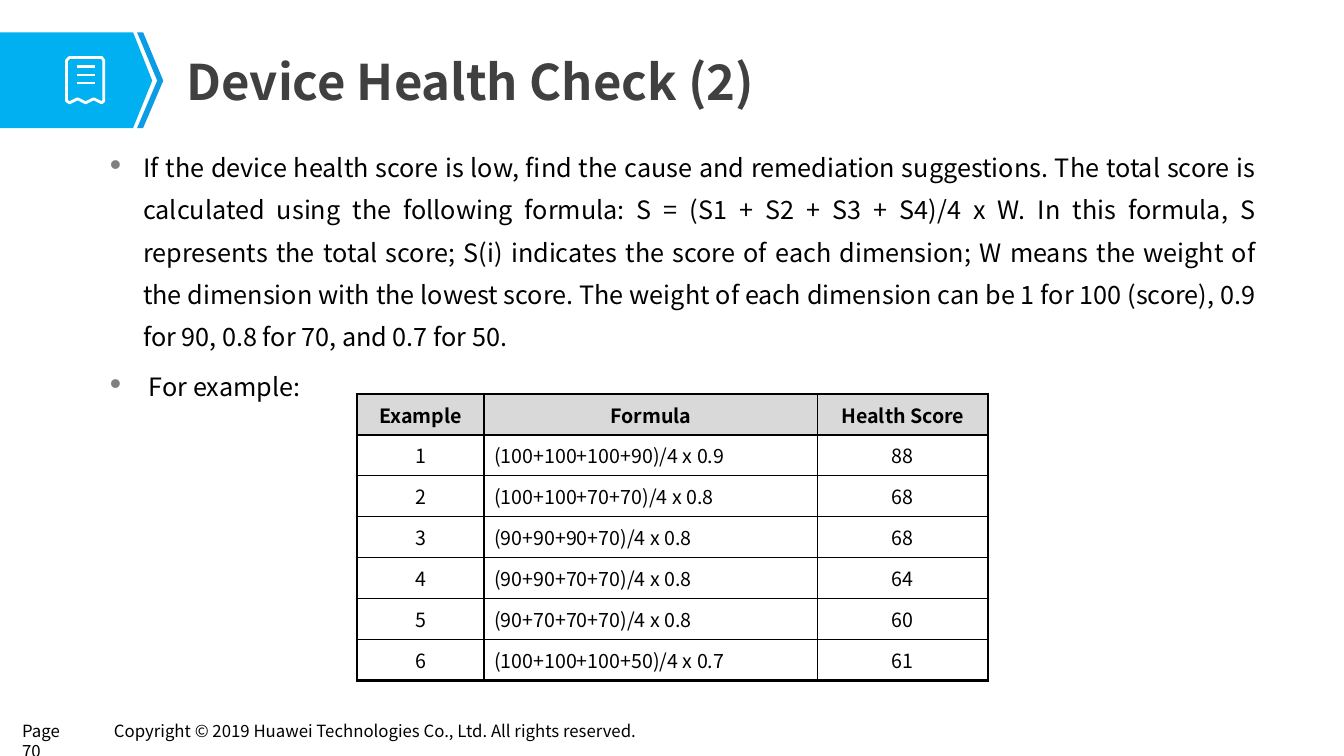
"""Build the Device Health Check slide with its score table."""
from lxml.etree import SubElement
from pptx import Presentation
from pptx.dml.color import RGBColor
from pptx.enum.shapes import MSO_CONNECTOR
from pptx.enum.text import MSO_ANCHOR, PP_ALIGN
from pptx.oxml.ns import qn
from pptx.util import Inches, Pt

FONT = "Noto Sans CJK SC"


def color(value):
    return RGBColor.from_string(value)


def style_text(paragraph, size, hex_color="000000", bold=False):
    for run in paragraph.runs:
        run.font.name = FONT
        run.font.size = Pt(size)
        run.font.bold = bold
        run.font.color.rgb = color(hex_color)


presentation = Presentation()
presentation.slide_width = Inches(13.33)
presentation.slide_height = Inches(7.5)
slide = presentation.slides.add_slide(presentation.slide_layouts[5])

footers = [
    (0.13, 0.77, "Page 70"),
    (1.04, 5.66, "Copyright © 2019 Huawei Technologies Co., Ltd. All rights reserved."),
]
for left, width, text in footers:
    footer = slide.shapes.add_textbox(Inches(left), Inches(7.11), Inches(width), Inches(0.29))
    frame = footer.text_frame
    frame.word_wrap = True
    frame.margin_left = frame.margin_right = Inches(0.09)
    frame.margin_top = frame.margin_bottom = Inches(0.04)
    frame.text = text
    style_text(frame.paragraphs[0], 12)

banner = [(0, 0.32), (1.32, 0.32), (1.51, 0.8), (1.32, 1.27), (0, 1.27)]
chevron = [(1.36, 0.32), (1.42, 0.32), (1.62, 0.8), (1.42, 1.27), (1.36, 1.27), (1.56, 0.8)]
receipt = [(0.69, 0.57), (1.01, 0.57), (1.03, 0.6), (1.03, 1), (1.01, 1.02), (0.93, 0.98),
           (0.85, 1.02), (0.77, 0.98), (0.69, 1.02), (0.66, 1), (0.66, 0.6)]
for points, fill in [(banner, "00B0F0"), (chevron, "0B9CE5"), (receipt, None)]:
    corners = [(Inches(x), Inches(y)) for x, y in points]
    builder = slide.shapes.build_freeform(*corners[0])
    builder.add_line_segments(corners[1:], close=True)
    shape = builder.convert_to_shape()
    shape.shadow.inherit = False
    if fill:
        shape.fill.solid()
        shape.fill.fore_color.rgb = color(fill)
        shape.line.fill.background()
    else:
        shape.fill.background()
        shape.line.color.rgb = color("FFFFFF")
        shape.line.width = Pt(2)

for row in range(3):
    y = Inches(0.66 + 0.08 * row)
    text_line = slide.shapes.add_connector(
        MSO_CONNECTOR.STRAIGHT, Inches(0.76), y, Inches(0.94), y)
    text_line.line.color.rgb = color("FFFFFF")
    text_line.line.width = Pt(1.5)
    SubElement(text_line._element.spPr, qn("a:effectLst"))

body = slide.shapes.add_textbox(Inches(1), Inches(1.35), Inches(11.55), Inches(5.12))
frame = body.text_frame
frame.word_wrap = True
frame.margin_left = frame.margin_right = Inches(0.09)
frame.margin_top = frame.margin_bottom = Inches(0.04)
frame.text = (
    "If the device health score is low, find the cause and remediation suggestions. "
    "The total score is calculated using the following formula: S = (S1 + S2 + S3 + S4)/4 x W. "
    "In this formula, S represents the total score; S(i) indicates the score of each dimension; "
    "W means the weight of the dimension with the lowest score. "
    "The weight of each dimension can be 1 for 100 (score), 0.9 for 90, 0.8 for 70, "
    "and 0.7 for 50."
)
example = frame.add_paragraph()
example.text = " For example:"
for paragraph in frame.paragraphs:
    properties = paragraph._p.get_or_add_pPr()
    properties.set("marL", str(Inches(0.33)))
    properties.set("indent", str(-Inches(0.33)))
    bullet_color = SubElement(properties, qn("a:buClr"))
    SubElement(bullet_color, qn("a:srgbClr"), val="808080")
    SubElement(properties, qn("a:buSzPct"), val="60000")
    SubElement(properties, qn("a:buFont"), typeface="Wingdings", charset="2")
    SubElement(properties, qn("a:buChar"), char="l")
    paragraph.alignment = PP_ALIGN.JUSTIFY
    paragraph.line_spacing = 1.4
    style_text(paragraph, 18)
example.space_before = Pt(5.4)

title = slide.shapes.title
title.left, title.top = Inches(1.74), Inches(0.45)
title.width, title.height = Inches(10.75), Inches(0.7)
frame = title.text_frame
frame.vertical_anchor = MSO_ANCHOR.MIDDLE
frame.margin_left = frame.margin_right = Inches(0.11)
frame.margin_top = frame.margin_bottom = Inches(0.05)
frame.text = "Device Health Check (2)"
frame.paragraphs[0].alignment = PP_ALIGN.LEFT
style_text(frame.paragraphs[0], 35, "404040", True)

scores = [
    ("Example", "Formula", "Health Score"),
    ("1", "(100+100+100+90)/4 x 0.9", "88"),
    ("2", "(100+100+70+70)/4 x 0.8", "68"),
    ("3", "(90+90+90+70)/4 x 0.8", "68"),
    ("4", "(90+90+70+70)/4 x 0.8", "64"),
    ("5", "(90+70+70+70)/4 x 0.8", "60"),
    ("6", "(100+100+100+50)/4 x 0.7", "61"),
]
last_row, last_column = len(scores) - 1, 2
table = slide.shapes.add_table(
    len(scores), 3, Inches(3.54), Inches(3.91), Inches(6.26), Inches(2.84)).table
for column, width in zip(table.columns, (1.26, 3.31, 1.69)):
    column.width = Inches(width)

for r, values in enumerate(scores):
    for c, value in enumerate(values):
        cell = table.cell(r, c)
        cell.margin_left = cell.margin_right = Inches(0.1)
        cell.margin_top = cell.margin_bottom = Inches(0.05)
        cell.vertical_anchor = MSO_ANCHOR.MIDDLE
        outer_edges = {"lnL": c == 0, "lnR": c == last_column,
                       "lnT": r == 0, "lnB": r == last_row}
        for edge, is_outer in outer_edges.items():
            border = SubElement(cell._tc.get_or_add_tcPr(), qn(f"a:{edge}"),
                                w=str(Pt(2.25 if is_outer else 1)))
            border_fill = SubElement(border, qn("a:solidFill"))
            SubElement(border_fill, qn("a:srgbClr"), val="000000")
        cell.fill.solid()
        cell.fill.fore_color.rgb = color("D9D9D9" if r == 0 else "FFFFFF")
        cell.text_frame.text = value
        paragraph = cell.text_frame.paragraphs[0]
        is_formula = r > 0 and c == 1
        paragraph.alignment = PP_ALIGN.LEFT if is_formula else PP_ALIGN.CENTER
        style_text(paragraph, 14, bold=r == 0)

presentation.save("out.pptx")
